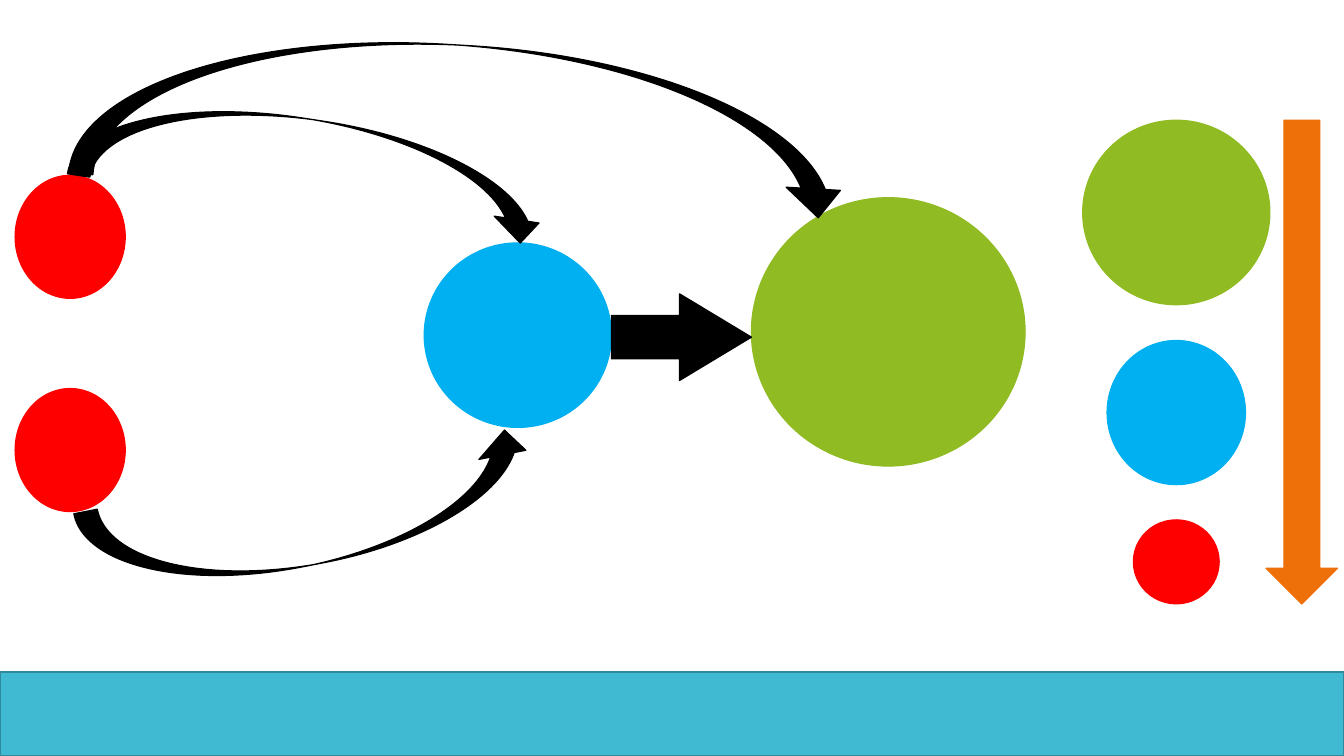
import pptx
import pptx.dml.color
import pptx.enum.shapes
import pptx.util

Pt = pptx.util.Pt
KIND = pptx.enum.shapes.MSO_SHAPE

SLIDE_W, SLIDE_H = 960, 540
RED, BLUE, GREEN = "FF0000", "00B0F0", "90BB23"
BLACK, ORANGE = "000000", "EE7008"
FOOTER_H = 60
FOOTER = {"fill": "40BAD2", "line": "2F8A9B"}

NODES = [
    (10.8, 125.2, 78.7, 87.9, RED),
    (303, 173.5, 133.7, 131.8, BLUE),
    (10.8, 277.5, 78.7, 87.9, RED),
    (536.7, 141.2, 195.5, 191.7, GREEN),
]

KEY_CENTRE = 840.2
KEY_NODES = [
    (85.9, 133.7, 131.8, GREEN),
    (243.2, 98.9, 103, BLUE),
    (371.3, 61.3, 60, RED),
]

ARROWS = [
    (KIND.CURVED_DOWN_ARROW, 51.1, 85.7, 343.4, 64.8, BLACK, {"rotation": 8.7}, ()),
    (KIND.CURVED_UP_ARROW, 56.2, 334.8, 330.5, 68.4, BLACK, {"rotation": 349}, ()),
    (KIND.RIGHT_ARROW, 436.7, 209.9, 100.1, 61.9, BLACK, {}, (0.5, 0.83)),
    (KIND.DOWN_ARROW, 904.3, 85.9, 51.1, 345.6, ORANGE, {}, ()),
    (KIND.CURVED_DOWN_ARROW, 51.8, 32.4, 555.8, 108, BLACK, {"rotation": 3.4}, (0.16, 0.36, 0.19)),
]


def rgb(hex_value):
    return pptx.dml.color.RGBColor.from_string(hex_value)


def add_figure(s, kind, x, y, w, h, fill, line=None, fmt=None, adj=()):
    sp = s.shapes.add_shape(kind, Pt(x), Pt(y), Pt(w), Pt(h))
    sp.shadow.inherit = False
    sp.fill.solid()
    sp.fill.fore_color.rgb = rgb(fill)
    sp.line.color.rgb = rgb(line or fill)
    sp.line.width = Pt(0.85)
    for name, value in (fmt or {}).items():
        setattr(sp, name, value)
    for i, value in enumerate(adj):
        sp.adjustments[i] = value
    return sp


def main():
    prs = pptx.Presentation()
    for name, value in {"slide_width": SLIDE_W, "slide_height": SLIDE_H}.items():
        setattr(prs, name, Pt(value))
    s = prs.slides.add_slide(prs.slide_layouts[6])

    for x, y, w, h, fill in NODES:
        add_figure(s, KIND.OVAL, x, y, w, h, fill)
    for y, w, h, fill in KEY_NODES:
        add_figure(s, KIND.OVAL, KEY_CENTRE - w / 2, y, w, h, fill)
    for kind, x, y, w, h, fill, fmt, adj in ARROWS:
        add_figure(s, kind, x, y, w, h, fill, fmt=fmt, adj=adj)
    add_figure(s, KIND.RECTANGLE, 0, SLIDE_H - FOOTER_H, SLIDE_W, FOOTER_H, **FOOTER)

    prs.save("out.pptx")


if __name__ == "__main__":
    main()
